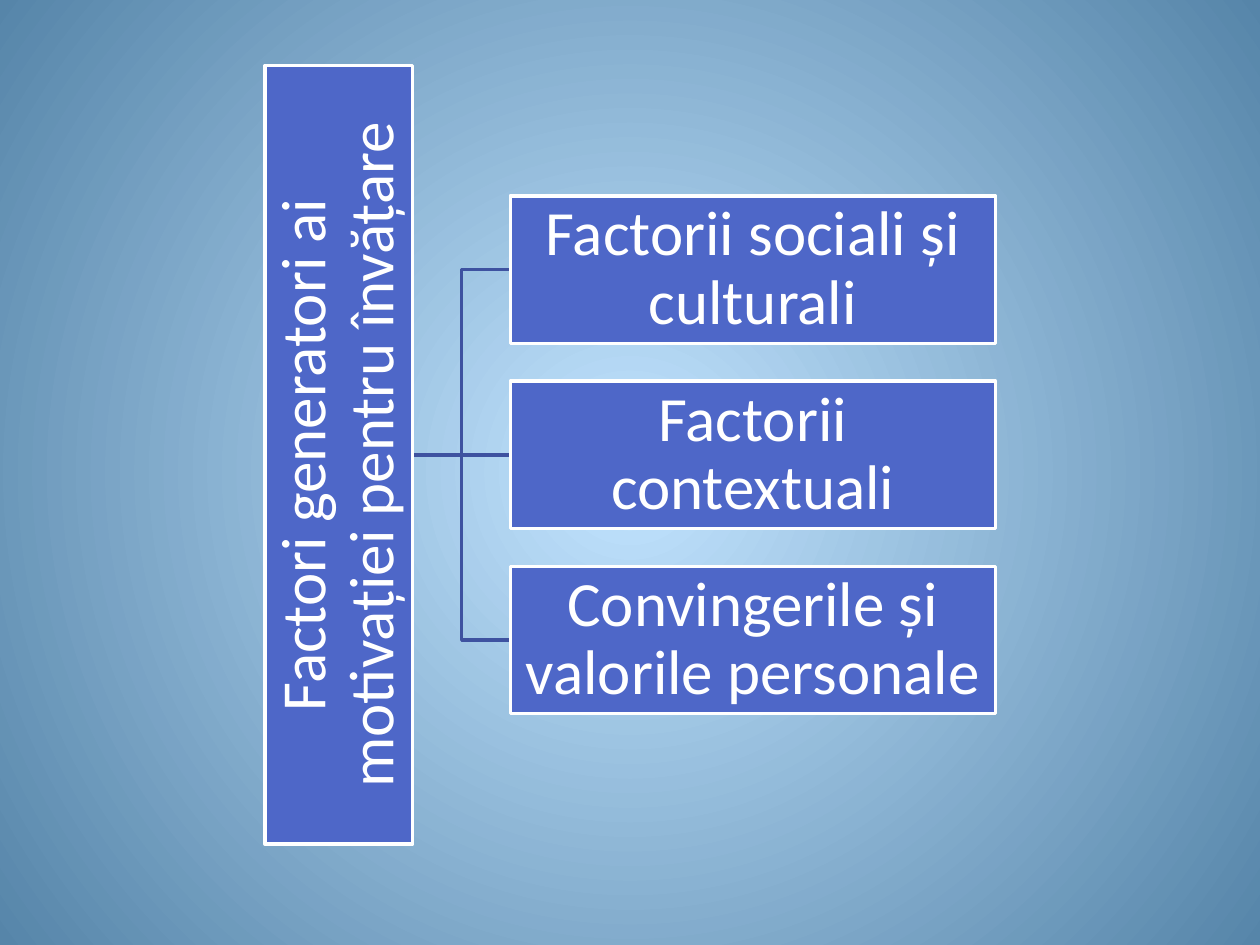
"""Build a slide with a horizontal hierarchy of the factors behind motivation for learning."""
from dataclasses import dataclass

from lxml import etree
from pptx import Presentation
from pptx.dml.color import RGBColor
from pptx.enum.shapes import MSO_CONNECTOR, MSO_SHAPE
from pptx.enum.text import MSO_ANCHOR, PP_ALIGN
from pptx.oxml.ns import qn
from pptx.shapes.autoshape import Shape
from pptx.shapes.connector import Connector
from pptx.slide import Slide
from pptx.util import Inches, Pt

STRAIGHT, ELBOW = MSO_CONNECTOR.STRAIGHT, MSO_CONNECTOR.ELBOW
RECTANGLE = MSO_SHAPE.RECTANGLE
MIDDLE, CENTER = MSO_ANCHOR.MIDDLE, PP_ALIGN.CENTER
BOTTOM_SITE, LEFT_SITE = 2, 1

COLORS = {
    "glow": "C2E4FF",
    "edge": "5685A9",
    "box": "4E67C8",
    "branch": "3E52A0",
    "white": "FFFFFF",
}
FONT = "Calibri"
BOX_HEIGHT = 1.17
ROOT_RIGHT = 3.28
FACTOR_LEFT = 4.05
MIDDLE_Y = 3.61
ROW_PITCH = 1.47


@dataclass
class Box:
    """A labelled rectangle placed by its centre, in inches."""

    label: str
    center_x: float
    center_y: float
    width: float
    rotation: float = 0


ROOT = Box("Factori generatori ai motivației pentru învățare", 2.69, MIDDLE_Y, 6.18, 270)
FACTOR_WIDTH = 3.85
FACTORS = [
    Box(label, FACTOR_LEFT + FACTOR_WIDTH / 2, MIDDLE_Y + row * ROW_PITCH, FACTOR_WIDTH)
    for row, label in enumerate(
        ["Factorii sociali și culturali", "Factorii contextuali", "Convingerile și valorile personale"],
        start=-1,
    )
]


def rgb(name: str) -> RGBColor:
    """Return a palette colour."""
    return RGBColor.from_string(COLORS[name])


def paint_background(slide: Slide) -> None:
    """Fill the background with a gradient that darkens away from the centre."""
    fill = slide.background.fill
    fill.gradient()
    for stop, name, position in zip(fill.gradient_stops, ("glow", "edge"), (0, 1)):
        stop.color.rgb = rgb(name)
        stop.position = position
    linear = next(slide.element.iter(qn("a:lin")))
    radial = etree.Element(qn("a:path"), {"path": "circle"})
    etree.SubElement(radial, qn("a:fillToRect"), {side: "50000" for side in "ltrb"})
    linear.getparent().replace(linear, radial)


def add_branch(slide: Slide, factor: Box) -> Connector:
    """Draw the line from the root to a factor."""
    kind = STRAIGHT if factor.center_y == MIDDLE_Y else ELBOW
    branch = slide.shapes.add_connector(
        kind, Inches(ROOT_RIGHT), Inches(MIDDLE_Y), Inches(FACTOR_LEFT), Inches(factor.center_y)
    )
    branch.line.color.rgb = rgb("branch")
    branch.line.width = Pt(2)
    etree.SubElement(branch.element.spPr, qn("a:effectLst"))
    return branch


def add_box(slide: Slide, box: Box) -> Shape:
    """Draw a rectangle with its centred label."""
    rectangle = slide.shapes.add_shape(
        RECTANGLE,
        Inches(box.center_x - box.width / 2),
        Inches(box.center_y - BOX_HEIGHT / 2),
        Inches(box.width),
        Inches(BOX_HEIGHT),
    )
    rectangle.rotation = box.rotation
    rectangle.shadow.inherit = False
    rectangle.fill.solid()
    rectangle.fill.fore_color.rgb = rgb("box")
    rectangle.line.color.rgb = rgb("white")
    rectangle.line.width = Pt(2)

    frame = rectangle.text_frame
    frame.word_wrap = True
    frame.vertical_anchor = MIDDLE
    frame.margin_left = frame.margin_right = Inches(0.03)
    frame.margin_top = frame.margin_bottom = Inches(0.03)
    paragraph = frame.paragraphs[0]
    paragraph.alignment = CENTER
    paragraph.line_spacing = 0.9
    run = paragraph.add_run()
    run.text = box.label
    run.font.name = FONT
    run.font.size = Pt(36)
    run.font.color.rgb = rgb("white")
    return rectangle


def join_straight(branch: Connector, root: Shape, factor: Shape) -> None:
    """Attach the middle branch, starting at the turned root's right side."""
    branch.begin_connect(root, BOTTOM_SITE)
    branch.end_connect(factor, LEFT_SITE)
    branch.begin_x, branch.begin_y = Inches(ROOT_RIGHT), Inches(MIDDLE_Y)


def main() -> None:
    """Build and save the presentation."""
    presentation = Presentation()
    presentation.slide_width, presentation.slide_height = Inches(10), Inches(7.5)
    slide = presentation.slides.add_slide(presentation.slide_layouts[6])
    paint_background(slide)
    branches = [add_branch(slide, factor) for factor in reversed(FACTORS)]
    root = add_box(slide, ROOT)
    factors = [add_box(slide, factor) for factor in FACTORS]
    join_straight(branches[1], root, factors[1])
    presentation.save("out.pptx")


if __name__ == "__main__":
    main()
